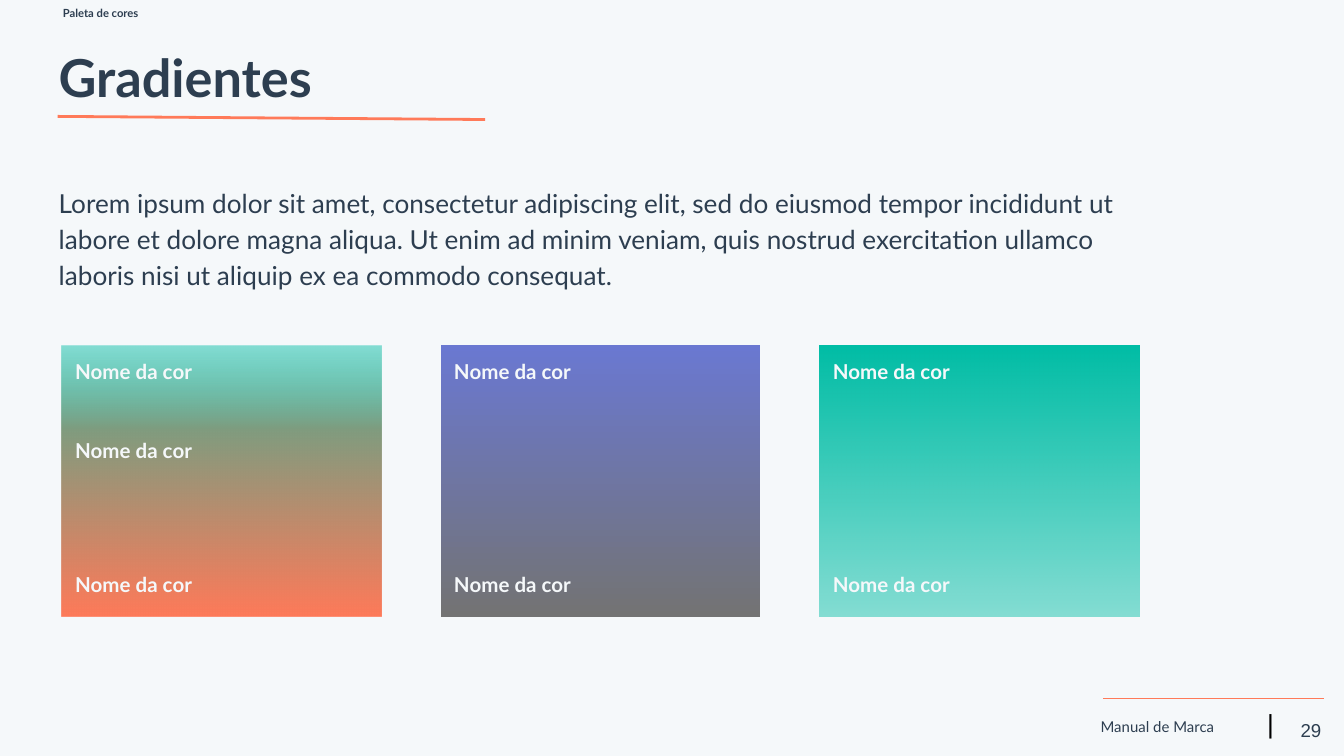
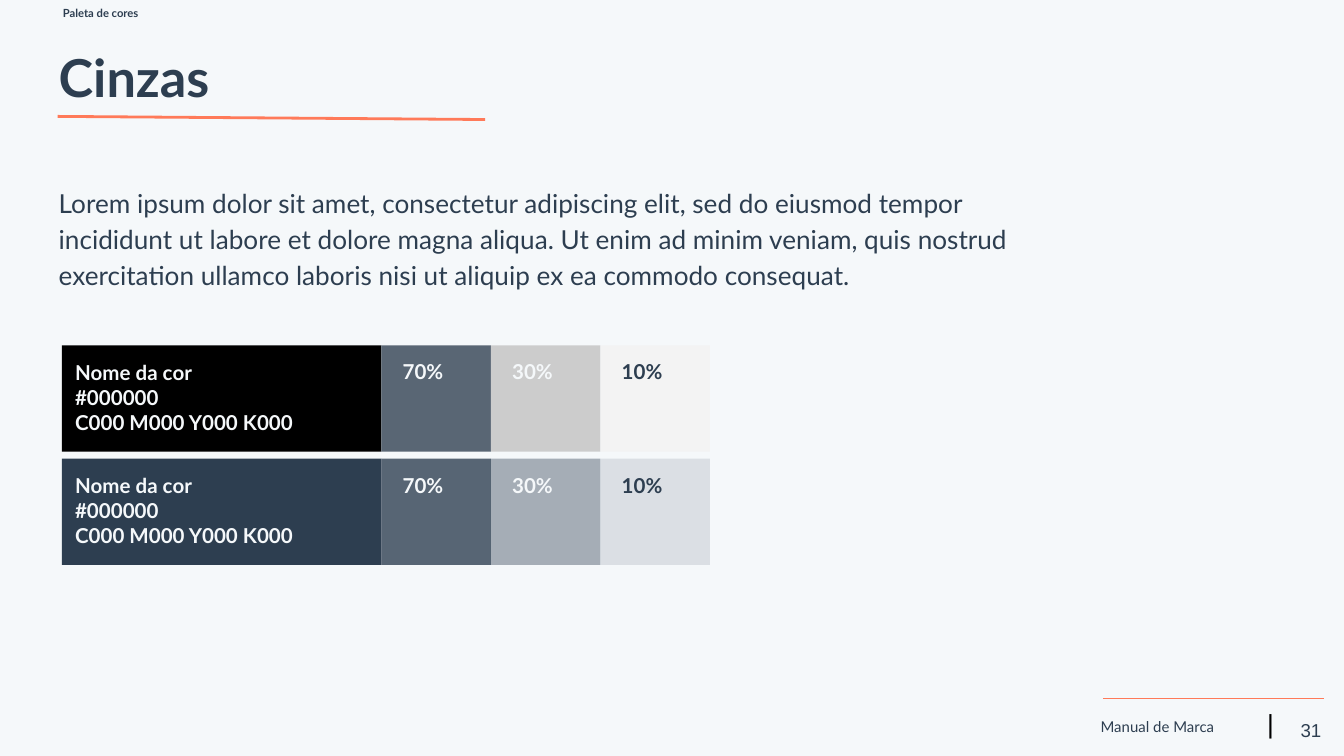
from lxml import etree
from pptx import Presentation
from pptx import util as u
from pptx.dml.color import RGBColor
from pptx.enum import shapes, text
from pptx.oxml.ns import qn

COLORS = {
    "paper": "F5F8FA",
    "navy": "2D3E50",
    "coral": "FF7A59",
    "teal": "00BDA5",
    "sage": "809C7F",
    "violet": "6A78D1",
    "gray": "737373",
    "black": "000000",
    "black70": "596674",
    "black30": "CCCCCC",
    "black10": "F3F3F3",
}
INSET = 0.25
BLOCK_LEFT, BLOCK_TOP, BLOCK_WIDTH = 1.17, 6.53, 6.04
LABEL_HEIGHT = 1.09

INTRO = (
    "Lorem ipsum dolor sit amet, consectetur adipiscing elit, sed do eiusmod "
    "tempor incididunt ut labore et dolore magna aliqua. Ut enim ad minim "
    "veniam, quis nostrud exercitation ullamco laboris nisi ut aliquip ex ea "
    "commodo consequat."
)
COLOR_NAME = "Nome da cor"
COLOR_CODES = f"{COLOR_NAME}\n#000000\nC000 M000 Y000 K000"

# Gradient stops: position in percent, colour, opacity in percent
GRADIENTS = [
    [(0, "teal", 46), (31, "sage", 100), (100, "coral", 100)],
    [(0, "violet", 100), (100, "gray", 100)],
    [(0, "teal", 100), (100, "teal", 46)],
]
# Offsets of the colour names from the top of each gradient block
GRADIENT_LABELS = [(0.03, 1.52, 4.04), (0.03, 4.04), (0.03, 4.04)]

# Each row: the base colour, then (colour, opacity) of its tints
GRAY_ROWS = [
    ("black", [("black70", 100), ("black30", 100), ("black10", 100)]),
    ("navy", [("navy", 79), ("navy", 40), ("navy", 13)]),
]
TINT_LABELS = [("70%", "paper"), ("30%", "paper"), ("10%", "navy")]


def rgb(name):
    return RGBColor.from_string(COLORS[name])


def format_text(frame, words, size, color="navy", bold=False, font="Lato",
                align=text.PP_ALIGN.LEFT, anchor=text.MSO_ANCHOR.TOP):
    frame.text = words
    frame.word_wrap = True
    frame.vertical_anchor = anchor
    frame.margin_left = frame.margin_right = u.Cm(INSET)
    frame.margin_top = frame.margin_bottom = u.Cm(INSET)
    for para in frame.paragraphs:
        para.alignment = align
        for span in para.runs:
            span.font.name = font
            span.font.size = u.Pt(size)
            span.font.bold = bold
            span.font.color.rgb = rgb(color)


def add_text(page, left, top, width, height, words, size, **style):
    box = page.shapes.add_textbox(*map(u.Cm, (left, top, width, height)))
    format_text(box.text_frame, words, size, **style)
    return box


def add_label(page, left, top, width, words, color="paper"):
    add_text(page, left, top, width, LABEL_HEIGHT, words, 11,
             color=color, bold=True)


def add_line(page, start, end, weight):
    line = page.shapes.add_connector(
        shapes.MSO_CONNECTOR.STRAIGHT, *map(u.Cm, start + end))
    line.line.color.rgb = rgb("coral")
    line.line.width = u.Pt(weight)
    etree.SubElement(line._element.spPr, qn("a:effectLst"))


def add_block(page, left, top, width, height):
    block = page.shapes.add_shape(
        shapes.MSO_SHAPE.RECTANGLE, *map(u.Cm, (left, top, width, height)))
    block.shadow.inherit = False
    block.line.fill.background()
    return block


def set_opacity(color_element, opacity):
    if opacity < 100:
        alpha = etree.SubElement(color_element, qn("a:alpha"))
        alpha.set("val", str(opacity * 1000))


def fill_solid(block, color, opacity=100):
    block.fill.solid()
    block.fill.fore_color.rgb = rgb(color)
    set_opacity(block._element.spPr.find(".//" + qn("a:srgbClr")), opacity)


def fill_gradient(block, stops):
    block.fill.gradient()
    block.fill.gradient_angle = 270
    stop_list = block._element.spPr.find(".//" + qn("a:gsLst"))
    for stop in list(stop_list):
        stop_list.remove(stop)
    for position, color, opacity in stops:
        stop = etree.SubElement(stop_list, qn("a:gs"))
        stop.set("pos", str(position * 1000))
        tone = etree.SubElement(stop, qn("a:srgbClr"))
        tone.set("val", COLORS[color])
        set_opacity(tone, opacity)


def add_page(deck, title, number, intro_width):
    page = deck.slides.add_slide(deck.slide_layouts[5])

    # Header
    heading = page.shapes.title
    heading.left, heading.top = u.Cm(0.86), u.Cm(0.61)
    heading.width, heading.height = u.Cm(23.67), u.Cm(1.6)
    format_text(heading.text_frame, title, 28, bold=True)
    add_line(page, (1.09, 2.2), (9.17, 2.26), 1.5)
    add_text(page, 0.94, 0, 5.64, 0.61, "Paleta de cores", 6, bold=True)

    # Introduction
    intro = add_text(page, 0.86, 3.2, intro_width, 2.4, INTRO, 14)
    para = intro.text_frame.paragraphs[0]
    para.line_spacing = 1.15
    para.space_after = u.Pt(16)

    # Footer
    middle = text.MSO_ANCHOR.MIDDLE
    add_line(page, (20.85, 13.2), (25.02, 13.2), 0.75)
    add_text(page, 20.55, 13.26, 3.86, 0.94, "Manual de Marca", 8,
             anchor=middle)
    add_text(page, 23.7, 13.13, 0.74, 0.94, "|", 14, color="black",
             font="Arial")
    add_text(page, 23.7, 13.26, 1.52, 1.09, str(number), 10, font="Arial",
             align=text.PP_ALIGN.RIGHT, anchor=middle)
    return page


def add_gradients(page):
    pitch = 7.16
    for index, (stops, offsets) in enumerate(zip(GRADIENTS, GRADIENT_LABELS)):
        left = BLOCK_LEFT + index * pitch
        block = add_block(page, left, BLOCK_TOP, BLOCK_WIDTH, 5.13)
        fill_gradient(block, stops)
        for offset in offsets:
            add_label(page, left, BLOCK_TOP + offset, 6.2, COLOR_NAME)


def add_grays(page):
    row_pitch, row_height, tint_width = 2.14, 2.01, 2.07
    for row, (base, tints) in enumerate(GRAY_ROWS):
        top = BLOCK_TOP + row * row_pitch
        label_top = top + 0.03
        block = add_block(page, BLOCK_LEFT, top, BLOCK_WIDTH, row_height)
        fill_solid(block, base)
        add_label(page, BLOCK_LEFT, label_top, 6.2, COLOR_CODES)
        for column, (tint, label) in enumerate(zip(tints, TINT_LABELS)):
            left = BLOCK_LEFT + BLOCK_WIDTH + column * tint_width
            fill_solid(add_block(page, left, top, tint_width, row_height),
                       *tint)
            add_label(page, left + 0.15, label_top, 1.93, *label)


def main():
    deck = Presentation()
    deck.slide_width, deck.slide_height = u.Cm(25.4), u.Cm(14.29)
    backdrop = deck.slide_master.background.fill
    backdrop.solid()
    backdrop.fore_color.rgb = rgb("paper")

    add_gradients(add_page(deck, "Gradientes", 29, 20.68))
    add_grays(add_page(deck, "Cinzas", 31, 19.79))
    deck.save("out.pptx")


if __name__ == "__main__":
    main()
